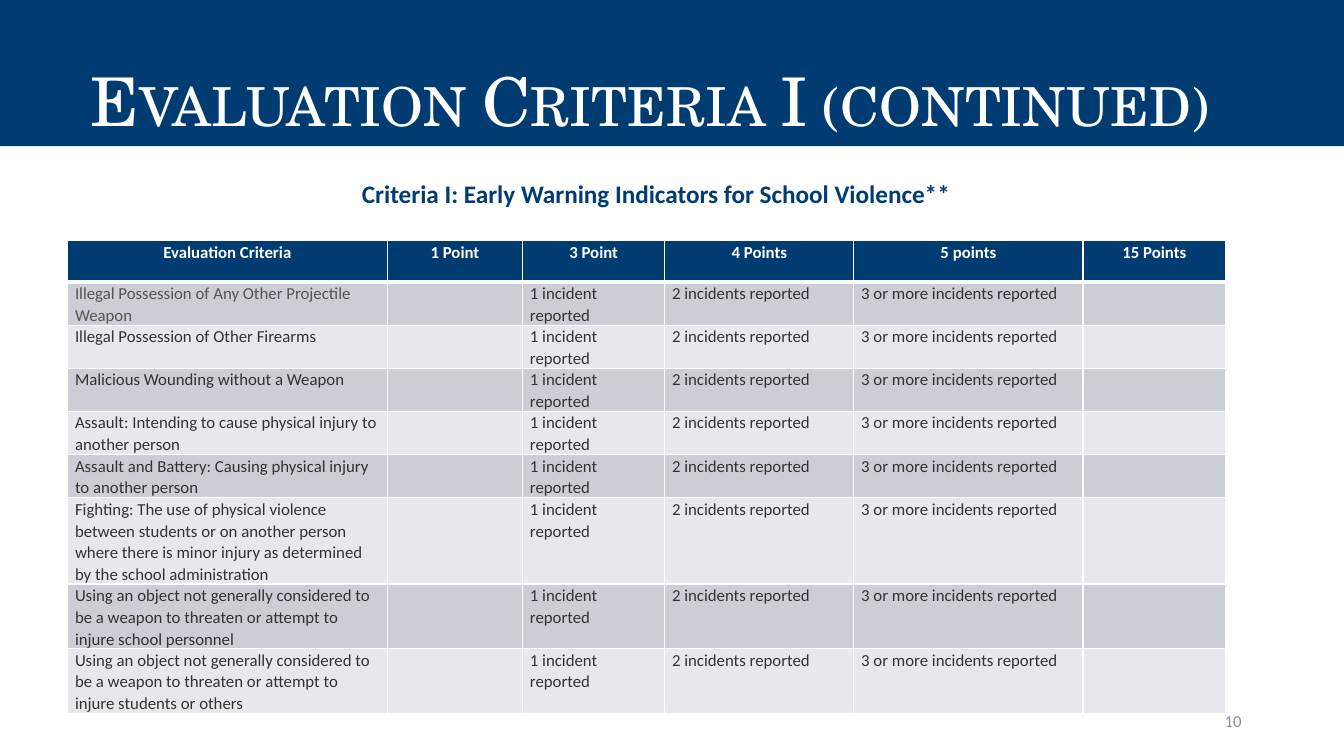
import dataclasses

import lxml.etree
import pptx
import pptx.dml.color
import pptx.enum.text
import pptx.oxml.ns
import pptx.util

Pt = pptx.util.Pt
ALIGN = pptx.enum.text.PP_ALIGN
ANCHOR = pptx.enum.text.MSO_ANCHOR


@dataclasses.dataclass(frozen=True)
class Theme:
    navy: str = "003C71"
    white: str = "FFFFFF"
    ink: str = "333333"
    soft_ink: str = "555555"
    muted: str = "8C92A5"
    bands: tuple = ("CCCED5", "E7E8EB")
    title_font: str = "TeX Gyre Schola"
    body_font: str = "Calibri"
    title_size: int = 48
    subtitle_size: int = 18
    body_size: int = 12


THEME = Theme()

HEADINGS = ("Evaluation Criteria", "1 Point", "3 Point", "4 Points", "5 points", "15 Points")
COLUMN_WIDTHS = (228.2, 96.8, 101.5, 135.1, 163.6, 102.1)
ROW_HEIGHT = 29.5
SCORES = ("", "1 incident reported", "2 incidents reported", "3 or more incidents reported", "")
CRITERIA = (
    "Illegal Possession of Any Other Projectile Weapon",
    "Illegal Possession of Other Firearms",
    "Malicious Wounding without a Weapon",
    "Assault: Intending to cause physical injury to another person",
    "Assault and Battery: Causing physical injury to another person",
    "Fighting: The use of physical violence between students or on another person "
    "where there is minor injury as determined by the school administration",
    "Using an object not generally considered to be a weapon to threaten or attempt "
    "to injure school personnel",
    "Using an object not generally considered to be a weapon to threaten or attempt "
    "to injure students or others",
)


def rgb(color):
    return pptx.dml.color.RGBColor.from_string(color)


def fill_solid(target, color):
    target.fill.solid()
    target.fill.fore_color.rgb = rgb(color)


def add_span(para, text, size, color, bold=False, font=THEME.body_font):
    span = para.add_run()
    span.text = text
    span.font.name = font
    span.font.size = Pt(size)
    span.font.bold = bold
    span.font.color.rgb = rgb(color)
    return span


def set_title(page, text):
    title = page.shapes.title
    title.left, title.top, title.width, title.height = Pt(0), Pt(0), Pt(960), Pt(104.4)
    fill_solid(title, THEME.navy)
    frame = title.text_frame
    frame.auto_size = pptx.enum.text.MSO_AUTO_SIZE.NONE
    frame.word_wrap = True
    frame.vertical_anchor = ANCHOR.BOTTOM
    frame.margin_left, frame.margin_right = Pt(64.8), Pt(7.2)
    frame.margin_top = frame.margin_bottom = Pt(3.6)
    para = frame.paragraphs[0]
    para.alignment = ALIGN.LEFT
    para.line_spacing = 0.9
    span = add_span(para, text, THEME.title_size, THEME.white, font=THEME.title_font)
    span.font._element.set("cap", "small")


def add_label(page, text, bounds, size, color, align, anchor=ANCHOR.TOP, bold=False):
    box = page.shapes.add_textbox(*map(Pt, bounds))
    frame = box.text_frame
    frame.word_wrap = True
    frame.vertical_anchor = anchor
    para = frame.paragraphs[0]
    para.alignment = align
    add_span(para, text, size, color, bold)


def set_borders(cell, top=1, bottom=1):
    properties = cell._tc.get_or_add_tcPr()
    for side, width in (("L", 1), ("R", 1), ("T", top), ("B", bottom)):
        line = lxml.etree.SubElement(properties, pptx.oxml.ns.qn(f"a:ln{side}"), w=str(Pt(width)))
        solid = lxml.etree.SubElement(line, pptx.oxml.ns.qn("a:solidFill"))
        lxml.etree.SubElement(solid, pptx.oxml.ns.qn("a:srgbClr"), val=THEME.white)


def fill_cell(cell, text, fill, color, header=False):
    fill_solid(cell, fill)
    cell.margin_left = cell.margin_right = Pt(5.2)
    cell.margin_top = cell.margin_bottom = Pt(0)
    para = cell.text_frame.paragraphs[0]
    para.alignment = ALIGN.CENTER if header else ALIGN.LEFT
    para.line_spacing = 1.07
    if text:
        add_span(para, text, THEME.body_size, color, bold=header)


def add_criteria_table(page):
    rows = [HEADINGS] + [(criterion, *SCORES) for criterion in CRITERIA]
    frame = page.shapes.add_table(
        len(rows), len(HEADINGS), Pt(48.4), Pt(172), Pt(sum(COLUMN_WIDTHS)), Pt(ROW_HEIGHT * len(rows))
    )
    table = frame.table
    table.horz_banding = False
    for column, width in zip(table.columns, COLUMN_WIDTHS):
        column.width = Pt(width)
    for row_index, texts in enumerate(rows):
        table.rows[row_index].height = Pt(ROW_HEIGHT)
        header = row_index == 0
        for column_index, text in enumerate(texts):
            cell = table.cell(row_index, column_index)
            # A thick rule separates the header from the body
            set_borders(cell, top=3 if row_index == 1 else 1, bottom=3 if header else 1)
            if header:
                fill, color = THEME.navy, THEME.white
            else:
                fill = THEME.bands[(row_index - 1) % 2]
                color = THEME.soft_ink if (row_index, column_index) == (1, 0) else THEME.ink
            fill_cell(cell, text, fill, color, header)


def main():
    deck = pptx.Presentation()
    deck.slide_width, deck.slide_height = Pt(960), Pt(540)
    page = deck.slides.add_slide(deck.slide_layouts[5])

    # Title band
    set_title(page, "Evaluation Criteria I (continued)")

    # Page number
    add_label(page, "10", (678, 500.5, 216, 28.8), THEME.body_size, THEME.muted,
              ALIGN.RIGHT, ANCHOR.MIDDLE)

    # Scoring table and its heading
    add_criteria_table(page)
    add_label(page, "Criteria I: Early Warning Indicators for School Violence**",
              (229, 123.8, 479.5, 29), THEME.subtitle_size, THEME.navy, ALIGN.CENTER, bold=True)

    deck.save("out.pptx")


if __name__ == "__main__":
    main()
